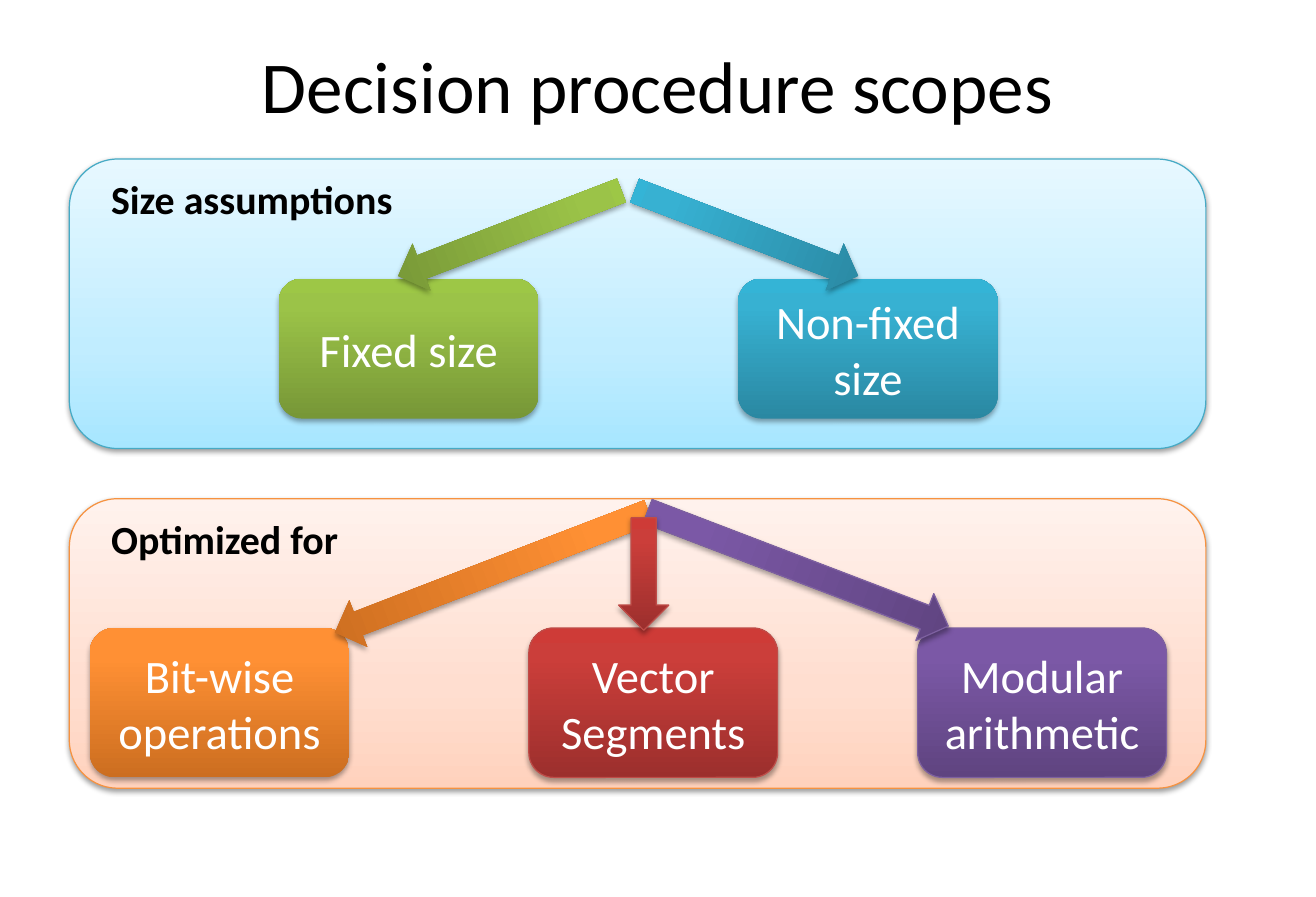
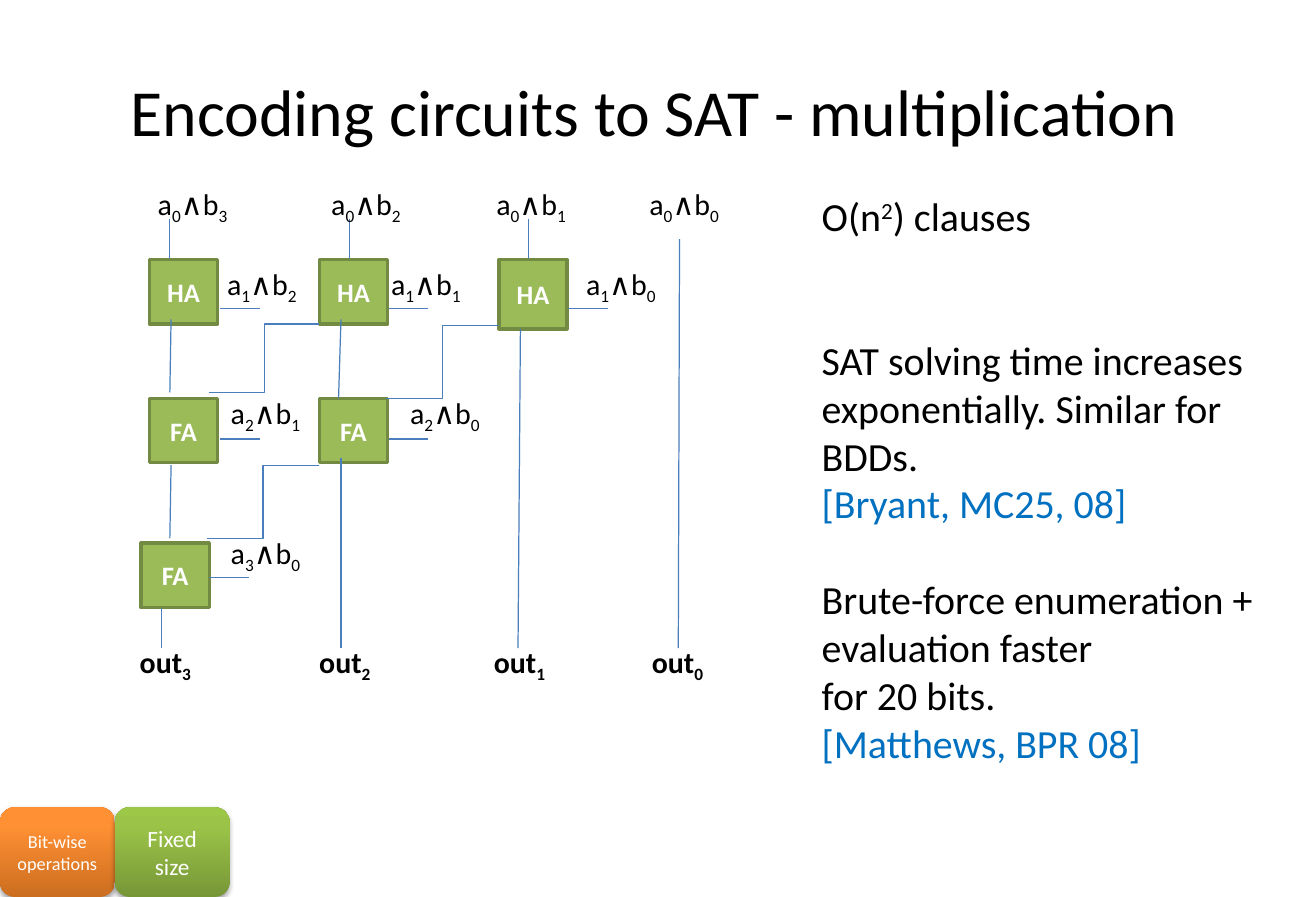
from copy import deepcopy
from dataclasses import dataclass
from typing import Any, Iterator, NamedTuple, Optional

from pptx import Presentation
from pptx.dml.color import RGBColor as RGB
from pptx.enum.shapes import MSO_CONNECTOR as Link, MSO_SHAPE as Form
from pptx.enum.text import MSO_ANCHOR as Anchor, MSO_AUTO_SIZE as Fit, PP_ALIGN as Align
from pptx.oxml import parse_xml
from pptx.oxml.ns import nsdecls, qn
from pptx.slide import Slide
from pptx.util import Emu, Pt

SCALE = 9144  # EMU in one px, 100 px to the inch
MARKS = {"_": -25000, "^": 30000}  # lowers or raises the next letter


class Paint(NamedTuple):
    stops: tuple[str, str, str]  # bottom, middle, top
    edge: Optional[str] = None
    mid: int = 80
    alpha: int = 35
    drop: int = 23000


@dataclass(frozen=True)
class Theme:
    font: str = "Calibri"
    ink: str = "000000"
    white: str = "FFFFFF"
    cite: str = "0070C0"
    gate: str = "9BBB59"
    rim: str = "738A42"
    wire: str = "4B7EBC"
    title: float = 44
    long: float = 39.6
    node: float = 28
    body: float = 24
    term: float = 18
    cell: float = 16
    orange: Paint = Paint(("CC6E20", "FF9034", "FF9136"))
    green: Paint = Paint(("779737", "9BC348", "9DC746"))
    blue: Paint = Paint(("2A88A2", "37B1D2", "34B4D6"))
    red: Paint = Paint(("9C2F2D", "CB3E3A", "CE3B37"), "BF4C48")
    purple: Paint = Paint(("5F4480", "7B58A6", "7C57A8"), "7D60A0")
    sky: Paint = Paint(("A7E6FF", "C1EDFF", "E7F8FF"), "46AAC5", 35, 38, 20000)
    peach: Paint = Paint(("FFD2BD", "FFDED0", "FFF2ED"), "F69240", 35, 38, 20000)


T = Theme()


class Box(NamedTuple):
    left: int
    top: int
    width: int
    height: int

    def emu(self) -> list[Emu]:
        return [Emu(side * SCALE) for side in self]


class Panel(NamedTuple):
    box: Box
    paint: Paint
    label: str
    tag: Box


class Node(NamedTuple):
    box: Box
    paint: Paint
    text: str
    size: float = T.node


class Arrow(NamedTuple):
    box: Box
    paint: Paint
    turn: float = 0


class Gate(NamedTuple):
    name: str
    left: int
    top: int
    height: int = 54


class Wire(NamedTuple):
    x1: int
    y1: int
    x2: int
    y2: int


class Note(NamedTuple):
    text: str
    gap: int = 0
    color: str = T.ink


PANELS = [
    Panel(Box(58, 417, 950, 242), T.peach, "Optimized for", Box(83, 425, 212, 50)),
    Panel(Box(58, 133, 950, 242), T.sky, "Size assumptions", Box(83, 141, 258, 50)),
]
NODES = [
    Node(Box(767, 525, 208, 125), T.purple, "Modular arithmetic"),
    Node(Box(75, 525, 217, 125), T.orange, "Bit-wise operations"),
    Node(Box(233, 233, 217, 117), T.green, "Fixed size"),
    Node(Box(617, 233, 217, 117), T.blue, "Non-fixed\nsize"),
    Node(Box(442, 525, 208, 125), T.red, "Vector Segments"),
]
ARROWS = [
    Arrow(Box(390, 338, 42, 281), T.orange, 69),
    Arrow(Box(603, 95, 42, 200), T.blue, 290.9),
    Arrow(Box(646, 341, 42, 269), T.purple, 290.9),
    Arrow(Box(405, 95, 42, 200), T.green, 69),
    Arrow(Box(517, 433, 42, 94), T.red),
]
BADGES = [
    Node(Box(0, 675, 96, 75), T.orange, "Bit-wise operations", 11),
    Node(Box(96, 675, 96, 75), T.green, "Fixed size", 14),
]
GATES = [
    Gate("HA", 417, 217, 58), Gate("HA", 267, 217), Gate("HA", 125, 217),
    Gate("FA", 267, 333), Gate("FA", 125, 333), Gate("FA", 118, 454),
]
# Row i holds the terms a_i∧b_j, with j counted from the right
TERMS = [
    (150, (533, 405, 267, 122)),
    (217, (480, 317, 180)),
    (325, (333, 183)),
    (442, (183,)),
]
OUTS = (535, 403, 257, 107)
INPUTS = [(508, 258), (358, 258), (217, 258), (358, 367), (217, 367), (208, 483)]
WIRES = [
    *(Wire(x, 183, x, 217) for x in (442, 292, 142)),
    *(Wire(x, y, x - 33, y) for x, y in INPUTS),
    Wire(435, 275, 433, 542),
    Wire(285, 267, 283, 333),
    Wire(143, 267, 142, 328),
    Wire(568, 200, 567, 542),
    Wire(143, 389, 142, 450),
    Wire(285, 383, 285, 542),
    Wire(135, 508, 135, 542),
]
BENDS = [
    Wire(417, 272, 323, 333),
    Wire(267, 271, 175, 328),
    Wire(267, 389, 173, 450),
]
NOTES = [
    Note("O(n^2) clauses"),
    Note("SAT solving time increases exponentially. Similar for BDDs.", 58),
    Note("[Bryant, MC25, 08]", color=T.cite),
    Note("Brute-force enumeration + evaluation faster", 29),
    Note("for 20 bits."),
    Note("[Matthews, BPR 08]", color=T.cite),
]


def style(item: Any, form: dict[str, Any]) -> None:
    for name, value in form.items():
        setattr(item, name, value)


def pieces(text: str) -> Iterator[tuple[str, int]]:
    """Yield each run of text with its baseline shift."""
    for mark, shift in MARKS.items():
        if mark in text:
            head, *rest = text.split(mark)
            yield head, 0
            for part in rest:
                yield part[0], shift
                if part[1:]:
                    yield part[1:], 0
            return
    yield text, 0


def write(para: Any, text: str, size: float, color: str = T.ink, bold: bool = False) -> None:
    form = {"name": T.font, "size": Pt(size), "bold": bold}
    for part, shift in pieces(text):
        run = para.add_run()
        run.text = part
        style(run.font, form)
        run.font.color.rgb = RGB.from_string(color)
        if shift:
            run.font._element.set("baseline", str(shift))


def center(shape: Any, text: str, size: float, color: str = T.white, bold: bool = False) -> None:
    frame = shape.text_frame
    style(frame, {"word_wrap": True, "vertical_anchor": Anchor.MIDDLE, "auto_size": Fit.NONE})
    for num, line in enumerate(text.split("\n")):
        para = frame.add_paragraph() if num else frame.paragraphs[0]
        para.alignment = Align.CENTER
        write(para, line, size, color, bold)


def outline(line: Any, color: str, width: float = 0.75) -> None:
    line.color.rgb = RGB.from_string(color)
    line.width = Pt(width)


def gloss(shapes: Any, form: Form, box: Box, paint: Paint) -> Any:
    """Add a shape with a three-stop gradient and a soft shadow."""
    shape = shapes.add_shape(form, *box.emu())
    shape.fill.gradient()
    shape.fill.gradient_angle = 90
    props = shape._element.spPr
    stops = props.find(qn("a:gradFill")).find(qn("a:gsLst"))
    stops.append(deepcopy(stops[-1]))
    for stop, spot, color in zip(shape.fill.gradient_stops, (0, paint.mid, 100), paint.stops):
        stop.position = spot / 100
        stop.color.rgb = RGB.from_string(color)
    if paint.edge:
        outline(shape.line, paint.edge)
    else:
        shape.line.fill.background()
    shape.shadow.inherit = False
    props.find(qn("a:effectLst")).append(parse_xml(
        f'<a:outerShdw {nsdecls("a")} blurRad="40000" dist="{paint.drop}" dir="5400000" '
        f'rotWithShape="0"><a:srgbClr val="000000"><a:alpha val="{paint.alpha * 1000}"/>'
        "</a:srgbClr></a:outerShdw>"))
    return shape


def add_node(shapes: Any, node: Node) -> None:
    center(gloss(shapes, Form.ROUNDED_RECTANGLE, node.box, node.paint), node.text, node.size)


def add_label(slide: Slide, box: Box, text: str, size: float, bold: bool = False) -> None:
    frame = slide.shapes.add_textbox(*box.emu()).text_frame
    style(frame, {"word_wrap": False, "auto_size": Fit.SHAPE_TO_FIT_TEXT})
    write(frame.paragraphs[0], text, size, bold=bold)


def add_gate(slide: Slide, gate: Gate) -> None:
    shape = slide.shapes.add_shape(Form.RECTANGLE, *Box(gate.left, gate.top, 57, gate.height).emu())
    shape.shadow.inherit = False
    shape.fill.solid()
    shape.fill.fore_color.rgb = RGB.from_string(T.gate)
    outline(shape.line, T.rim, 2)
    center(shape, gate.name, T.cell, bold=True)


def add_wire(slide: Slide, kind: Link, wire: Wire) -> None:
    line = slide.shapes.add_connector(kind, *(Emu(end * SCALE) for end in wire))
    outline(line.line, T.wire)
    line._element.spPr.append(parse_xml(f'<a:effectLst {nsdecls("a")}/>'))


def add_notes(slide: Slide, box: Box) -> None:
    frame = slide.shapes.add_textbox(*box.emu()).text_frame
    style(frame, {"word_wrap": True, "auto_size": Fit.SHAPE_TO_FIT_TEXT})
    for num, note in enumerate(NOTES):
        para = frame.add_paragraph() if num else frame.paragraphs[0]
        para.space_before = Pt(note.gap)
        write(para, note.text, T.body, note.color)


def add_slide(deck: Any, title: str, box: Box, size: float) -> Slide:
    slide = deck.slides.add_slide(deck.slide_layouts[5])
    head = slide.shapes.title
    style(head, dict(zip(("left", "top", "width", "height"), box.emu())))
    center(head, title, size, T.ink)
    return slide


def add_scopes(deck: Any) -> None:
    slide = add_slide(deck, "Decision procedure scopes", Box(55, 8, 990, 125), T.title)
    for panel in PANELS:
        gloss(slide.shapes, Form.ROUNDED_RECTANGLE, panel.box, panel.paint)
        add_label(slide, panel.tag, panel.label, T.body, True)
    for node in NODES:
        add_node(slide.shapes, node)
    for arrow in ARROWS:
        gloss(slide.shapes, Form.DOWN_ARROW, arrow.box, arrow.paint).rotation = arrow.turn


def add_circuit(deck: Any) -> None:
    slide = add_slide(deck, "Encoding circuits to SAT - multiplication",
                      Box(52, 30, 990, 125), T.long)
    group = slide.shapes.add_group_shape()
    for badge in BADGES:
        add_node(group.shapes, badge)
    for gate in GATES:
        add_gate(slide, gate)
    for kind, wires in ((Link.STRAIGHT, WIRES), (Link.ELBOW, BENDS)):
        for wire in wires:
            add_wire(slide, kind, wire)
    for i, (top, lefts) in enumerate(TERMS):
        for j, left in enumerate(lefts):
            add_label(slide, Box(left, top, 78, 40), f"a_{i}∧b_{j}", T.term)
    for j, left in enumerate(OUTS):
        add_label(slide, Box(left, 533, 70, 40), f"out_{j}", T.term, True)
    add_notes(slide, Box(677, 155, 391, 495))


def main() -> None:
    deck = Presentation()
    style(deck, {"slide_width": Emu(1100 * SCALE), "slide_height": Emu(750 * SCALE)})
    add_scopes(deck)
    add_circuit(deck)
    deck.save("out.pptx")


if __name__ == "__main__":
    main()
